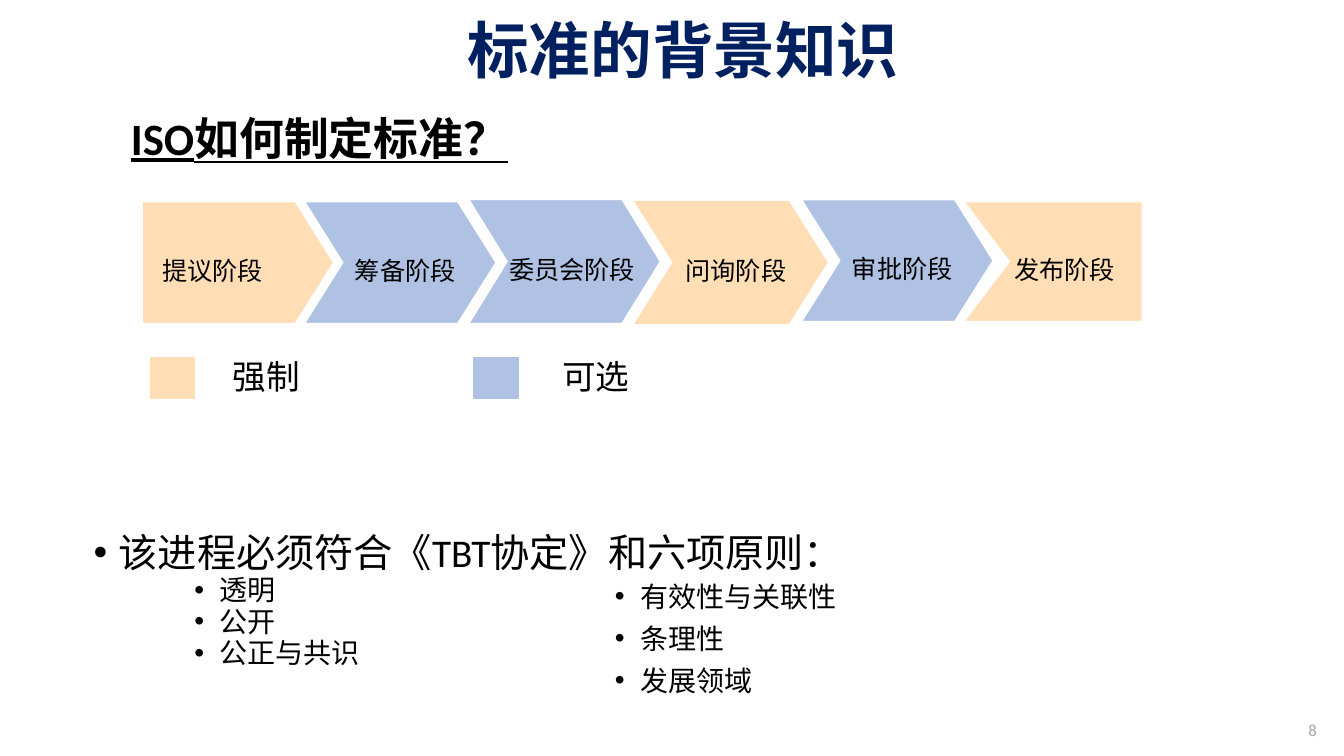
import pptx
import pptx.dml.color
import pptx.enum.shapes
import pptx.enum.text
import pptx.oxml
import pptx.oxml.ns
import pptx.util

Inches = pptx.util.Inches
Pt = pptx.util.Pt
ALIGN = pptx.enum.text.PP_ALIGN
ANCHOR = pptx.enum.text.MSO_ANCHOR
MANDATORY = "FFDEB6"
OPTIONAL = "AFC2E4"


def rgb(hex_color):
    """Turn a hex string into a colour."""
    return pptx.dml.color.RGBColor.from_string(hex_color)


def paint(shape, fill, outline):
    """Give a shape a plain fill and a thin outline without shadow."""
    shape.shadow.inherit = False
    shape.fill.solid()
    shape.fill.fore_color.rgb = rgb(fill)
    shape.line.color.rgb = rgb(outline)
    shape.line.width = Pt(1)


def write(frame, text, size, font="Calibri", color="000000", bold=False,
          underline=False, align=ALIGN.LEFT, spacing=1.0, before=0, after=0,
          indent=0, bullet=False, add=False):
    """Write one formatted paragraph, as the first or an added one."""
    paragraph = frame.add_paragraph() if add else frame.paragraphs[0]
    paragraph.alignment = align
    paragraph.line_spacing = spacing
    paragraph.space_before = Pt(before)
    paragraph.space_after = Pt(after)
    properties = paragraph._p.get_or_add_pPr()
    properties.set("marL", str(Inches(indent)))
    properties.set("indent", str(Inches(-0.25 if bullet else 0)))
    if bullet:
        namespace = pptx.oxml.ns.nsdecls("a")
        properties.append(pptx.oxml.parse_xml(f'<a:buFont {namespace} typeface="Arial"/>'))
        properties.append(pptx.oxml.parse_xml(f'<a:buChar {namespace} char="•"/>'))
    run = paragraph.add_run()
    run.text = text
    run.font.name = font
    run.font.size = Pt(size)
    run.font.bold = bold
    run.font.underline = underline
    run.font.color.rgb = rgb(color)


def text_frame(slide, left, top, width, height, anchor=ANCHOR.TOP):
    """Add a wrapping text box and return its frame."""
    box = slide.shapes.add_textbox(Inches(left), Inches(top), Inches(width), Inches(height))
    box.text_frame.word_wrap = True
    box.text_frame.vertical_anchor = anchor
    return box.text_frame


def add_heading(slide, left, top, width, height):
    """Place the slide title and the question below it."""
    title = slide.shapes.title
    title.left, title.top = Inches(left), Inches(top)
    title.width, title.height = Inches(width), Inches(height)
    title.text_frame.vertical_anchor = ANCHOR.MIDDLE
    write(title.text_frame, "标准的背景知识", 44, color="002060", bold=True,
          align=ALIGN.CENTER, spacing=0.9)
    question = text_frame(slide, left - 0.49, top + 0.96, width, 0.7)
    write(question, "ISO如何制定标准？", 32, bold=True, underline=True,
          spacing=0.9, indent=0.37)


def add_stage(slide, name, left, top, width, height, notch, point, fill, outline, insets):
    """Draw one stage arrow with an optional notch and point."""
    right, bottom, middle = left + width, top + height, top + height / 2
    corners = [(right - point, top), (right, middle), (right - point, bottom),
               (left, bottom), (left + notch, middle)]
    builder = slide.shapes.build_freeform(Inches(left), Inches(top))
    builder.add_line_segments([(Inches(x), Inches(y)) for x, y in corners], close=True)
    stage = builder.convert_to_shape()
    paint(stage, fill, outline)
    frame = stage.text_frame
    frame.word_wrap = True
    frame.vertical_anchor = ANCHOR.MIDDLE
    frame.margin_left, frame.margin_right = (Inches(inset) for inset in insets)
    frame.margin_top = frame.margin_bottom = Inches(0.16)
    write(frame, name, 18, spacing=1.5)


def add_process(slide, left, top):
    """Lay out the chain of six stages."""
    stages = [
        ("提议阶段", 0, 0.02, 1.9, 1.21, 0, 0.38, MANDATORY, "FFFFFF", (0.2, 0.2)),
        ("筹备阶段", 1.61, 0.02, 1.9, 1.21, 0.38, 0.38, OPTIONAL, "FFFFFF", (0.5, 0.2)),
        ("委员会阶段", 3.24, 0, 1.9, 1.23, 0.38, 0.38, OPTIONAL, "FFFFFF", (0.4, 0)),
        ("问询阶段", 4.89, 0.02, 1.9, 1.21, 0.38, 0.38, MANDATORY, MANDATORY, (0.5, 0.2)),
        ("审批阶段", 6.54, 0, 1.9, 1.21, 0.38, 0.38, OPTIONAL, "FFFFFF", (0.5, 0.2)),
        ("发布阶段", 8.15, 0.02, 1.77, 1.19, 0.45, 0, MANDATORY, "FFFFFF", (0.5, 0)),
    ]
    for name, across, down, *form in stages:
        add_stage(slide, name, left + across, top + down, *form)


def add_legend(slide, left, top):
    """Explain the two stage colours."""
    entries = [("强制", MANDATORY, 0, 0.72), ("可选", OPTIONAL, 3.21, 3.99)]
    for label, color, swatch_offset, label_offset in entries:
        swatch = slide.shapes.add_shape(
            pptx.enum.shapes.MSO_SHAPE.RECTANGLE, Inches(left + swatch_offset),
            Inches(top), Inches(0.44), Inches(0.4))
        paint(swatch, color, color)
        write(text_frame(slide, left + label_offset, top - 0.07, 1.84, 0.5), label, 24)


def add_principles(slide, left, top, width, height):
    """List the six principles in two columns under their lead."""
    lead = text_frame(slide, left, top, width, height)
    write(lead, "该进程必须符合《TBT协定》和六项原则：", 28, spacing=0.9,
          indent=0.25, bullet=True)
    for principle in ("透明", "公开", "公正与共识"):
        write(lead, principle, 20, spacing=0.9, before=0.8, indent=1.25,
              bullet=True, add=True)
    second = text_frame(slide, left + 4.17, top + 0.46, 5.83, 1.4)
    for index, principle in enumerate(("有效性与关联性", "条理性", "发展领域")):
        write(second, principle, 20, font="Arial", after=6, indent=1.25,
              bullet=True, add=index > 0)


def add_page_number(slide, left, top, width, height):
    """Place the page number."""
    frame = text_frame(slide, left, top, width, height, ANCHOR.MIDDLE)
    write(frame, "8", 12, color="A6A6A6", align=ALIGN.RIGHT)


def main():
    """Build the slide and save it."""
    deck = pptx.Presentation()
    deck.slide_width, deck.slide_height = Inches(13.33), Inches(7.5)
    slide = deck.slides.add_slide(deck.slide_layouts[5])
    add_heading(slide, 1.32, 0.15, 10.91, 0.77)
    add_process(slide, 1.41, 1.98)
    add_legend(slide, 1.49, 3.55)
    add_principles(slide, 0.83, 5.24, 12.43, 1.8)
    add_page_number(slide, 12.5, 7.09, 0.66, 0.3)
    deck.save("out.pptx")


if __name__ == "__main__":
    main()
